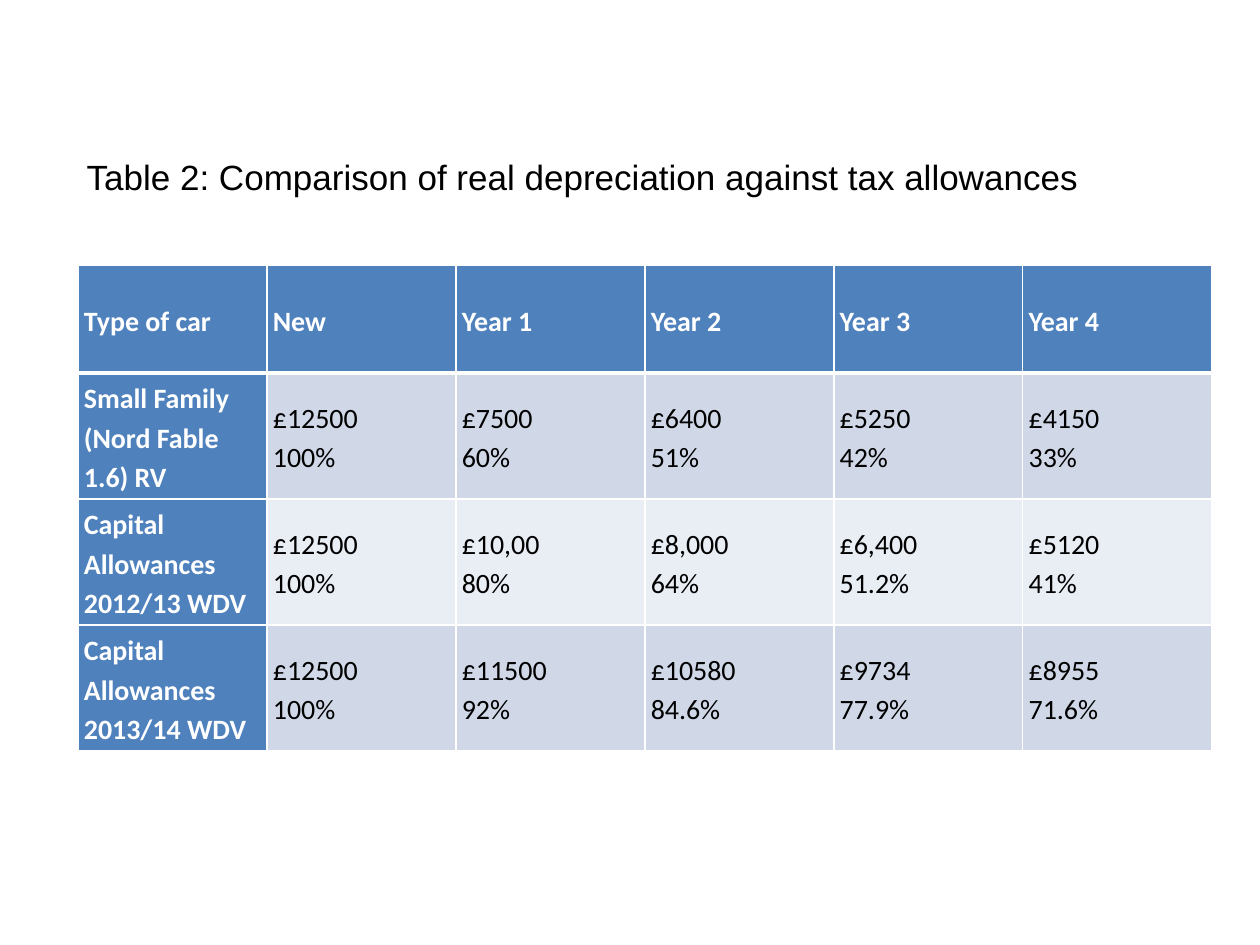
from lxml import etree
from pptx import Presentation
from pptx.dml.color import RGBColor
from pptx.enum.text import MSO_ANCHOR, PP_ALIGN
from pptx.oxml.ns import qn
from pptx.util import Emu, Pt

MIDDLE = MSO_ANCHOR.MIDDLE
LEFT = PP_ALIGN.LEFT
PX = 914400 // 126

WHITE = RGBColor(0xFF, 0xFF, 0xFF)
BLACK = RGBColor(0x00, 0x00, 0x00)
BLUE = RGBColor(0x4F, 0x81, 0xBD)
BANDS = (RGBColor(0xD0, 0xD8, 0xE8), RGBColor(0xE9, 0xED, 0xF4))

TITLE = "Table 2: Comparison of real depreciation against tax allowances"
ROWS = [
    ["Type of car", "New", "Year 1", "Year 2", "Year 3", "Year 4"],
    ["Small Family (Nord Fable 1.6) RV", "£12500\n100%", "£7500\n60%",
     "£6400\n51%", "£5250\n42%", "£4150\n33%"],
    ["Capital Allowances 2012/13 WDV", "£12500\n100%", "£10,00\n80%",
     "£8,000\n64%", "£6,400\n51.2%", "£5120\n41%"],
    ["Capital Allowances 2013/14 WDV", "£12500\n100%", "£11500\n92%",
     "£10580\n84.6%", "£9734\n77.9%", "£8955\n71.6%"],
]


def px(n):
    return Emu(n * PX)


def style_run(r, size, name, color, bold=False):
    r.font.size = Pt(size)
    r.font.name = name
    r.font.color.rgb = color
    r.font.bold = bold


def set_border(cell, side, width):
    tc_pr = cell._tc.get_or_add_tcPr()
    ln = etree.SubElement(tc_pr, qn(f"a:ln{side}"), w=str(Pt(width)))
    fill = etree.SubElement(ln, qn("a:solidFill"))
    etree.SubElement(fill, qn("a:srgbClr"), val=str(WHITE))


def add_title(s, x, y, w, h):
    sp = s.shapes.title
    sp.left, sp.top, sp.width, sp.height = px(x), px(y), px(w), px(h)
    tf = sp.text_frame
    tf.word_wrap = True
    tf.vertical_anchor = MIDDLE
    p = tf.paragraphs[0]
    p.alignment = LEFT
    r = p.add_run()
    r.text = TITLE
    style_run(r, 20, "Arial", BLACK)


def fill_cell(cell, text, row, col):
    is_header = row == 0 or col == 0
    top = 3 if row == 1 else 1
    bottom = 3 if row == 0 else 1
    for side, width in zip("LRTB", (1, 1, top, bottom)):
        set_border(cell, side, width)
    cell.fill.solid()
    cell.fill.fore_color.rgb = BLUE if is_header else BANDS[(row - 1) % 2]
    cell.vertical_anchor = MIDDLE
    cell.margin_left = cell.margin_right = px(6)
    cell.margin_top = cell.margin_bottom = px(4)
    p = cell.text_frame.paragraphs[0]
    p.line_spacing = 1.15
    for i, line in enumerate(text.split("\n")):
        if i:
            p.add_line_break()
        r = p.add_run()
        r.text = line
        style_run(r, 16, "Calibri", WHITE if is_header else BLACK, is_header)


def add_depreciation_table(s, x, y, w, header_h, row_h):
    n_rows, n_cols = len(ROWS), len(ROWS[0])
    h = header_h + row_h * (n_rows - 1)
    table = s.shapes.add_table(n_rows, n_cols, px(x), px(y), px(w), px(h)).table
    table.first_col = True
    for column in table.columns:
        column.width = px(w // n_cols)
    for i, texts in enumerate(ROWS):
        table.rows[i].height = px(row_h if i else header_h)
        for j, text in enumerate(texts):
            fill_cell(table.cell(i, j), text, i, j)


def main():
    prs = Presentation()
    prs.slide_width, prs.slide_height = px(1260), px(945)
    s = prs.slides.add_slide(prs.slide_layouts[5])
    add_title(s, 74, 149, 1026, 55)
    add_depreciation_table(s, 78, 265, 1134, 108, 125)
    prs.save("out.pptx")


if __name__ == "__main__":
    main()
